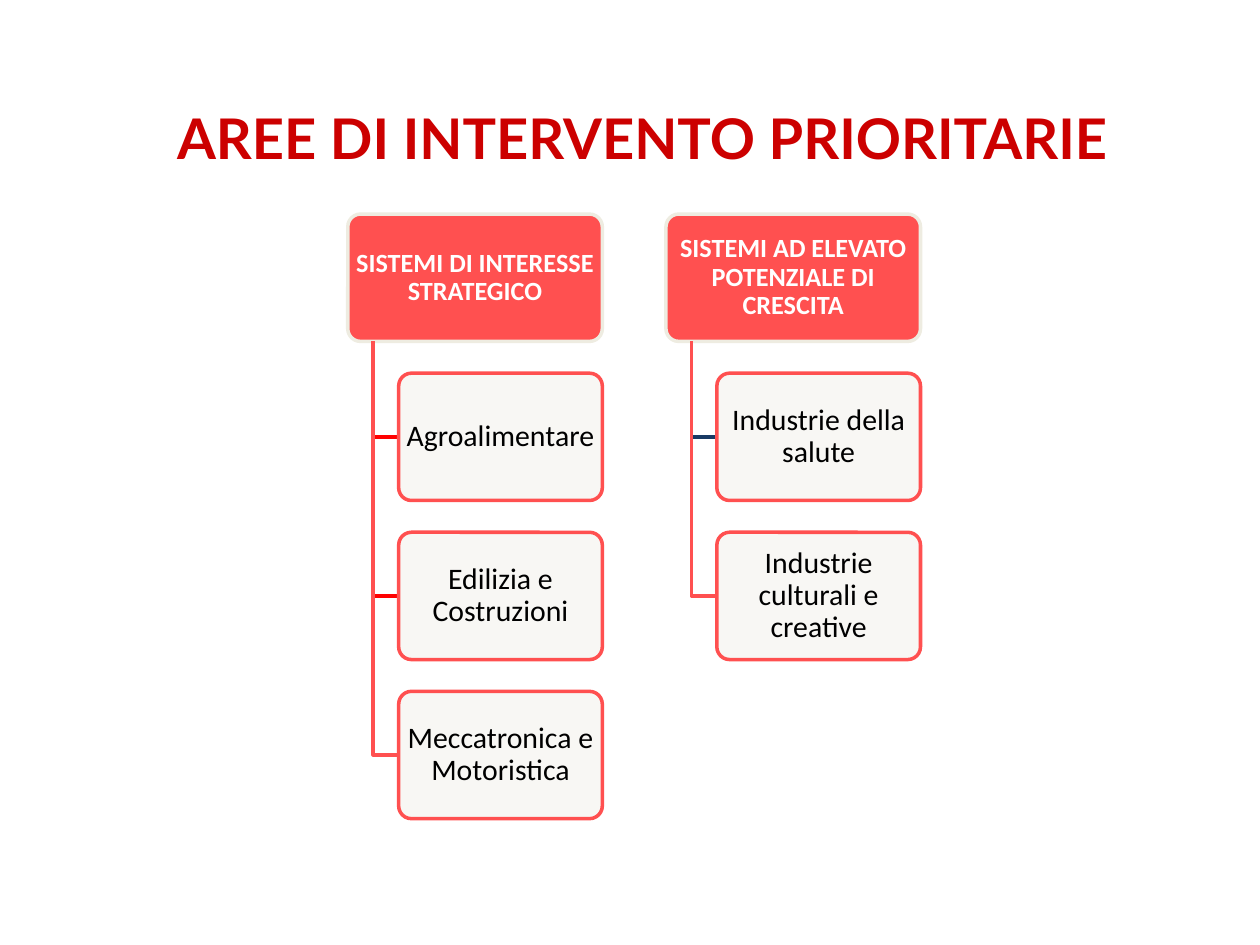
from dataclasses import dataclass

from lxml import etree
from pptx import Presentation, util as u
from pptx.dml.color import RGBColor
from pptx.enum import shapes, text
from pptx.oxml import ns


@dataclass(frozen=True)
class Theme:
    title_color: str = "CC0000"
    accent: str = "FF5050"
    bright: str = "FF0000"
    navy: str = "193A64"
    cream: str = "EEECE1"
    paper: str = "F8F7F3"
    white: str = "FFFFFF"
    black: str = "000000"
    title_font: str = "Lato"
    body_font: str = "Calibri"
    title_size: int = 32
    header_size: int = 15
    item_size: int = 17
    line_width: int = 2
    paper_opacity: int = 90


THEME = Theme()
SLIDE_WIDTH = u.Inches(10)
SLIDE_HEIGHT = u.Inches(7.5)
CELL = SLIDE_WIDTH / 39.6
GRID_LEFT, GRID_TOP = 10.93, 6.73
HEADER_WIDTH, BOX_HEIGHT = 8, 4
COLUMN_STEP, ROW_STEP = 10, 5
TRUNK_INDENT, ITEM_INDENT = 0.8, 1.6

AREAS = [
    ("SISTEMI DI INTERESSE STRATEGICO", [
        ("Agroalimentare", THEME.bright),
        ("Edilizia e Costruzioni", THEME.bright),
        ("Meccatronica e Motoristica", THEME.accent),
    ]),
    ("SISTEMI AD ELEVATO POTENZIALE DI CRESCITA", [
        ("Industrie della salute", THEME.navy),
        ("Industrie culturali e creative", THEME.accent),
    ]),
]


def cells(count):
    return round(count * CELL)


def write_text(shape, words, *, font, size, color, bold=False, spacing=1.0,
               margins=(0.1, 0.05)):
    frame = shape.text_frame
    frame.word_wrap = True
    frame.auto_size = text.MSO_AUTO_SIZE.NONE
    frame.vertical_anchor = text.MSO_ANCHOR.MIDDLE
    frame.margin_left = frame.margin_right = u.Inches(margins[0])
    frame.margin_top = frame.margin_bottom = u.Inches(margins[1])
    paragraph = frame.paragraphs[0]
    paragraph.alignment = text.PP_ALIGN.CENTER
    paragraph.line_spacing = spacing
    run = paragraph.add_run()
    run.text = words
    run.font.name = font
    run.font.size = u.Pt(size)
    run.font.bold = bold
    run.font.color.rgb = RGBColor.from_string(color)


class SlideBuilder:
    def __init__(self, slide, theme):
        self.slide = slide
        self.theme = theme

    def title(self, words, left, top, width, height):
        title = self.slide.shapes.title
        title.left, title.width = (round(SLIDE_WIDTH * share) for share in (left, width))
        title.top, title.height = (round(SLIDE_HEIGHT * share) for share in (top, height))
        write_text(title, words, font=self.theme.title_font, size=self.theme.title_size,
                   color=self.theme.title_color, bold=True)

    def outline(self, shape, color):
        shape.shadow.inherit = False
        shape.line.color.rgb = RGBColor.from_string(color)
        shape.line.width = u.Pt(self.theme.line_width)

    def box(self, words, column, row, width, *, fill, line, opacity=100, **format):
        box = self.slide.shapes.add_shape(
            shapes.MSO_SHAPE.ROUNDED_RECTANGLE,
            cells(column), cells(row), cells(width), cells(BOX_HEIGHT))
        box.adjustments[0] = 0.1
        box.fill.solid()
        box.fill.fore_color.rgb = RGBColor.from_string(fill)
        if opacity < 100:
            color = box.fill._xPr.find(ns.qn("a:solidFill"))[0]
            etree.SubElement(color, ns.qn("a:alpha"), val=str(opacity * 1000))
        self.outline(box, line)
        write_text(box, words, font=self.theme.body_font, spacing=0.9,
                   margins=(0.01, 0), **format)

    def header(self, words, column, row):
        self.box(words, column, row, HEADER_WIDTH, fill=self.theme.accent,
                 line=self.theme.cream, size=self.theme.header_size,
                 color=self.theme.white, bold=True)

    def item(self, words, column, row):
        self.box(words, column, row, HEADER_WIDTH - ITEM_INDENT, fill=self.theme.paper,
                 line=self.theme.accent, opacity=self.theme.paper_opacity,
                 size=self.theme.item_size, color=self.theme.black)

    def branch(self, column, row, end_column, end_row, color):
        builder = self.slide.shapes.build_freeform(cells(column), cells(row))
        builder.add_line_segments(
            [(cells(column), cells(end_row)), (cells(end_column), cells(end_row))],
            close=False)
        branch = builder.convert_to_shape()
        branch.fill.background()
        self.outline(branch, color)

    def area(self, heading, items, column, row):
        self.header(heading, column, row)
        for index, (words, color) in enumerate(items, start=1):
            item_row = row + index * ROW_STEP
            self.branch(column + TRUNK_INDENT, row + BOX_HEIGHT,
                        column + ITEM_INDENT, item_row + BOX_HEIGHT / 2, color)
            self.item(words, column + ITEM_INDENT, item_row)


def main():
    presentation = Presentation()
    presentation.slide_width = SLIDE_WIDTH
    presentation.slide_height = SLIDE_HEIGHT
    slide = presentation.slides.add_slide(presentation.slide_layouts[5])
    builder = SlideBuilder(slide, THEME)
    builder.title("AREE DI INTERVENTO PRIORITARIE", 0.06, 0.06, 0.9, 0.17)
    for index, (heading, items) in enumerate(AREAS):
        builder.area(heading, items, GRID_LEFT + index * COLUMN_STEP, GRID_TOP)
    presentation.save("out.pptx")


if __name__ == "__main__":
    main()
